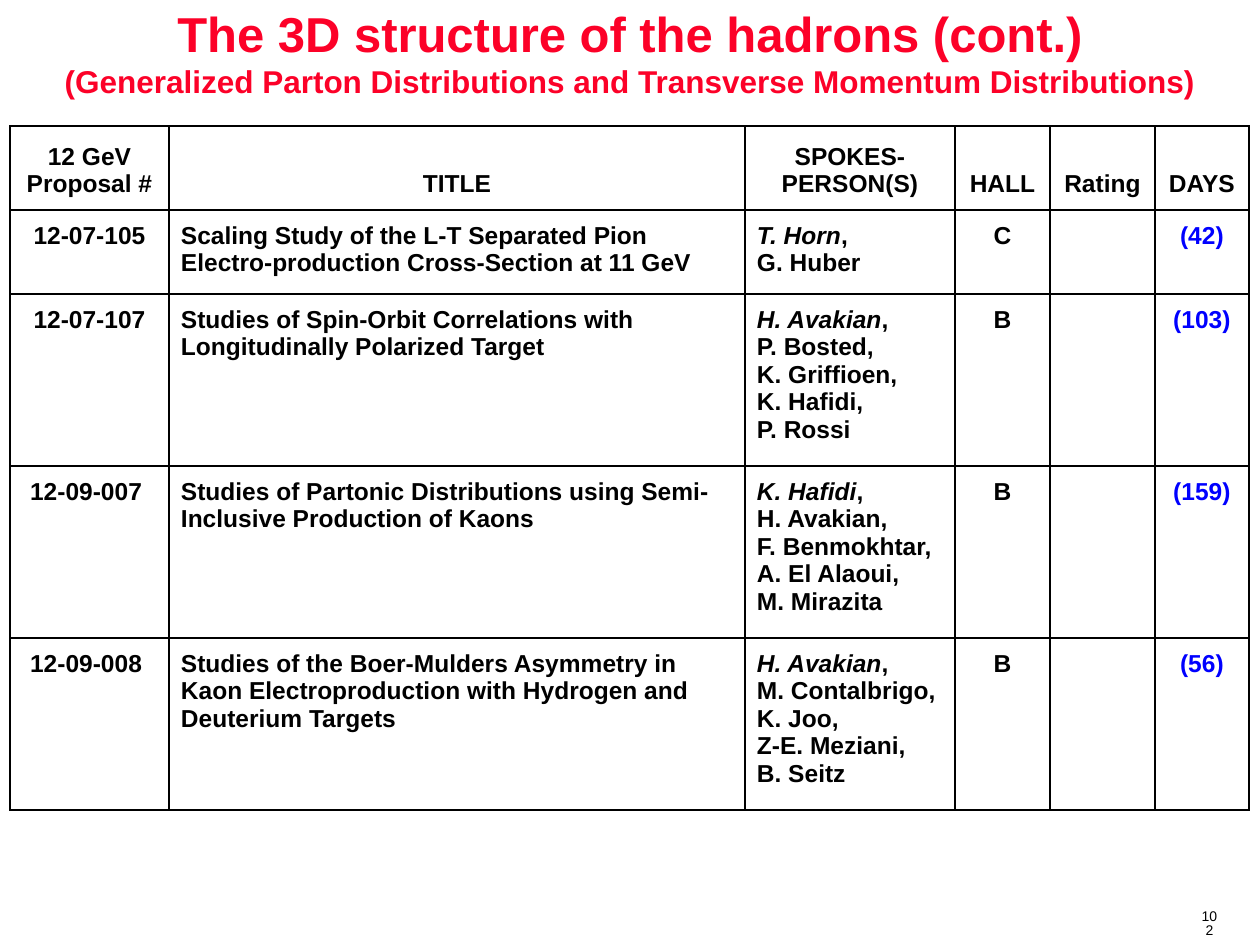
from lxml import etree
from pptx import Presentation
from pptx.dml.color import RGBColor
from pptx.enum.text import MSO_ANCHOR, PP_ALIGN
from pptx.oxml.ns import qn
from pptx.util import Emu, Pt

CENTER, LEFT = PP_ALIGN.CENTER, PP_ALIGN.LEFT
TOP, MIDDLE, BOTTOM = MSO_ANCHOR.TOP, MSO_ANCHOR.MIDDLE, MSO_ANCHOR.BOTTOM
SCALE = 914400 / 126
FONT = "Arial"
COLORS = {"title": "FC0128", "text": "000000", "days": "0000FF", "paper": "FFFFFF"}
COLUMNS = [159, 576, 210, 95, 105, 94]
ROWS = [84, 84, 172, 172, 172]
HEADINGS = ["12 GeV Proposal #", "TITLE", "SPOKES-PERSON(S)", "HALL", "Rating", "DAYS"]
PROPOSALS = [
    ("12-07-105", "Scaling Study of the L-T Separated Pion Electro-production Cross-Section at 11 GeV",
     ["T. Horn,", "G. Huber"], "C", "", "(42)"),
    ("12-07-107", "Studies of Spin-Orbit Correlations with Longitudinally Polarized Target",
     ["H. Avakian,", "P. Bosted,", "K. Griffioen,", "K. Hafidi,", "P. Rossi"], "B", "", "(103)"),
    ("12-09-007 ", "Studies of Partonic Distributions using Semi-Inclusive Production of Kaons",
     ["K. Hafidi,", "H. Avakian,", "F. Benmokhtar,", "A. El Alaoui,", "M. Mirazita"], "B", "", "(159)"),
    ("12-09-008 ", "Studies of the Boer-Mulders Asymmetry in Kaon Electroproduction with Hydrogen "
     "and Deuterium Targets",
     ["H. Avakian,", "M. Contalbrigo,", "K. Joo,", "Z-E. Meziani,", "B. Seitz"], "B", "", "(56)"),
]


def px(length):
    """Turn pixels into EMU."""
    return Emu(round(length * SCALE))


def style_para(para, size, color, align, bold=True):
    """Set the alignment and font of a paragraph."""
    para.alignment = align
    para.font.name, para.font.size, para.font.bold = FONT, Pt(size), bold
    para.font.color.rgb = RGBColor.from_string(COLORS[color])


def add_frame(page, left, top, width, height, anchor):
    """Add a wrapping text box and return its text frame."""
    frame = page.shapes.add_textbox(px(left), px(top), px(width), px(height)).text_frame
    frame.word_wrap = True
    frame.vertical_anchor = anchor
    return frame


def add_title(page, left, top, width, height):
    """Place the two-line title."""
    frame = add_frame(page, left, top, width, height, MIDDLE)
    frame.text = ("The 3D structure of the hadrons (cont.)\n"
                  "(Generalized Parton Distributions and Transverse Momentum Distributions)")
    for para, size in zip(frame.paragraphs, (28, 18)):
        style_para(para, size, "title", CENTER)


def add_page_number(page, left, top, width, height):
    """Place the page number."""
    frame = add_frame(page, left, top, width, height, TOP)
    frame.text = "102"
    para = frame.paragraphs[0]
    style_para(para, 8, "text", CENTER, bold=False)
    para.line_spacing = 0.8


def border_cell(cell):
    """Draw a one-point line on each side of a cell."""
    properties = cell._tc.get_or_add_tcPr()
    for index, side in enumerate(("a:lnL", "a:lnR", "a:lnT", "a:lnB")):
        line = etree.Element(qn(side), w=str(Pt(1)))
        fill = etree.SubElement(line, qn("a:solidFill"))
        etree.SubElement(fill, qn("a:srgbClr"), val=COLORS["text"])
        properties.insert(index, line)


def fill_cell(cell, text, color, align, anchor):
    """Write and style one table cell."""
    cell.fill.solid()
    cell.fill.fore_color.rgb = RGBColor.from_string(COLORS["paper"])
    cell.margin_left = cell.margin_right = cell.margin_top = cell.margin_bottom = px(12)
    cell.vertical_anchor = anchor
    cell.text = text
    for para in cell.text_frame.paragraphs:
        style_para(para, 14, color, align)
    border_cell(cell)


def add_proposals(page, left, top):
    """Place the table of proposals."""
    table = page.shapes.add_table(len(ROWS), len(COLUMNS), px(left), px(top),
                                  px(sum(COLUMNS)), px(sum(ROWS))).table
    table.first_row = table.horz_banding = False
    for column, width in zip(table.columns, COLUMNS):
        column.width = px(width)
    for row, height in zip(table.rows, ROWS):
        row.height = px(height)
    for column, heading in enumerate(HEADINGS):
        fill_cell(table.cell(0, column), heading, "text", CENTER, BOTTOM)
    for row, (number, title, people, *details) in enumerate(PROPOSALS, 1):
        for column, text in enumerate((number, title, "\n".join(people), *details)):
            color = "days" if HEADINGS[column] == "DAYS" else "text"
            align = LEFT if column in (1, 2) else CENTER
            fill_cell(table.cell(row, column), text, color, align, TOP)
        leader = table.cell(row, 2).text_frame.paragraphs[0]
        leader.runs[0].text = people[0].rstrip(",")
        leader.runs[0].font.italic = True
        leader.add_run().text = ","


def main():
    """Build the slide and save it."""
    deck = Presentation()
    deck.slide_width, deck.slide_height = px(1260), px(945)
    page = deck.slides.add_slide(deck.slide_layouts[6])
    add_page_number(page, 1188, 905, 43, 26)
    add_proposals(page, 10, 126)
    add_title(page, 0, 0, 1260, 103)
    deck.save("out.pptx")


if __name__ == "__main__":
    main()
